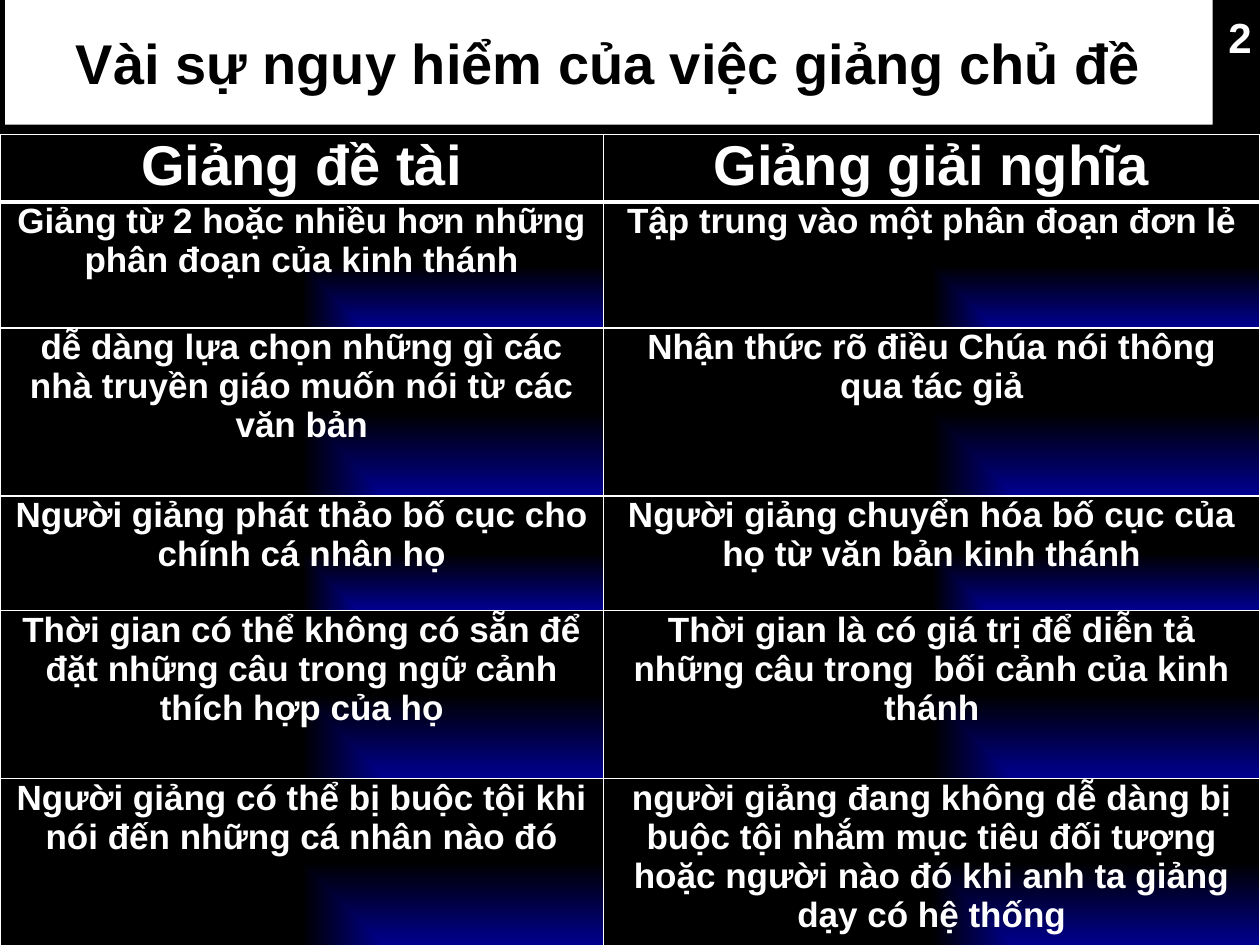
from dataclasses import dataclass

from lxml.etree import SubElement
from pptx import Presentation
from pptx.dml.color import RGBColor
from pptx.enum.text import MSO_ANCHOR, MSO_AUTO_SIZE, PP_ALIGN
from pptx.oxml.ns import qn
from pptx.util import Pt


@dataclass(frozen=True)
class Theme:
    font: str = "Arial"
    black: str = "000000"
    white: str = "FFFFFF"
    blue: str = "000090"
    heading_size: int = 32
    number_size: int = 24
    body_size: int = 20
    thin_line: int = 1
    thick_line: int = 3


THEME = Theme()
TITLE = "Vài sự nguy hiểm của việc giảng chủ đề"
COMPARISON = [
    ("Giảng đề tài", "Giảng giải nghĩa"),
    ("Giảng từ 2 hoặc nhiều hơn những phân đoạn của kinh thánh",
     "Tập trung vào một phân đoạn đơn lẻ"),
    ("dễ dàng lựa chọn những gì các nhà truyền giáo muốn nói từ các văn bản",
     "Nhận thức rõ điều Chúa nói thông qua tác giả"),
    ("Người giảng phát thảo bố cục cho chính cá nhân họ",
     "Người giảng chuyển hóa bố cục của họ từ văn bản kinh thánh"),
    ("Thời gian có thể không có sẵn để đặt những câu trong ngữ cảnh thích hợp của họ",
     "Thời gian là có giá trị để diễn tả những câu trong  bối cảnh của kinh thánh"),
    ("Người giảng có thể bị buộc tội khi nói đến những cá nhân nào đó",
     "người giảng đang không dễ dàng bị buộc tội nhắm mục tiêu đối tượng "
     "hoặc người nào đó khi anh ta giảng dạy có hệ thống"),
]
COLUMN_WIDTHS = [344.9, 375.1]
ROW_HEIGHTS = [38.2, 72, 96, 65.5, 96, 95.6]


def paint(fill, color):
    fill.solid()
    fill.fore_color.rgb = RGBColor.from_string(color)


def write(frame, text, size, color, align):
    frame.text = text
    for para in frame.paragraphs:
        para.alignment = align
        for span in para.runs:
            span.font.name = THEME.font
            span.font.size = Pt(size)
            span.font.bold = True
            span.font.color.rgb = RGBColor.from_string(color)


def add_border(properties, side, width):
    line = SubElement(properties, qn(f"a:ln{side}"), w=str(Pt(width)))
    solid = SubElement(line, qn("a:solidFill"))
    SubElement(solid, qn("a:srgbClr"), val=THEME.white)


def add_corner_gradient(properties):
    gradient = SubElement(properties, qn("a:gradFill"), rotWithShape="1")
    stops = SubElement(gradient, qn("a:gsLst"))
    for position, color in ((0, THEME.blue), (100000, THEME.black)):
        stop = SubElement(stops, qn("a:gs"), pos=str(position))
        SubElement(stop, qn("a:srgbClr"), val=color)
    outline = SubElement(gradient, qn("a:path"), path="rect")
    SubElement(outline, qn("a:fillToRect"), l="100000", t="100000")


def place_title(page, left, top, width, height):
    title = page.shapes.title
    title.left, title.top = Pt(left), Pt(top)
    title.width, title.height = Pt(width), Pt(height)
    paint(title.fill, THEME.white)
    frame = title.text_frame
    frame.auto_size = MSO_AUTO_SIZE.NONE
    frame.vertical_anchor = MSO_ANCHOR.MIDDLE
    write(frame, TITLE, THEME.heading_size, THEME.black, PP_ALIGN.CENTER)


def place_number(page, left, top, width, height):
    box = page.shapes.add_textbox(Pt(left), Pt(top), Pt(width), Pt(height))
    box.text_frame.word_wrap = False
    write(box.text_frame, "2", THEME.number_size, THEME.white, PP_ALIGN.LEFT)


def format_cell(cell, text, row):
    is_header = row == 0
    cell.margin_left = cell.margin_right = Pt(4.5)
    cell.margin_top = cell.margin_bottom = Pt(0)
    cell.vertical_anchor = MSO_ANCHOR.TOP
    size = THEME.heading_size if is_header else THEME.body_size
    write(cell.text_frame, text, size, THEME.white, PP_ALIGN.CENTER)
    properties = cell._tc.get_or_add_tcPr()
    thick_side = {0: "B", 1: "T"}.get(row)
    for side in "LRTB":
        width = THEME.thick_line if side == thick_side else THEME.thin_line
        add_border(properties, side, width)
    if is_header:
        paint(cell.fill, THEME.black)
    else:
        add_corner_gradient(properties)


def place_comparison(page, left, top, width, height):
    table = page.shapes.add_table(
        len(ROW_HEIGHTS), len(COLUMN_WIDTHS),
        Pt(left), Pt(top), Pt(width), Pt(height)).table
    table.horz_banding = False
    for column, column_width in zip(table.columns, COLUMN_WIDTHS):
        column.width = Pt(column_width)
    for row, row_height in zip(table.rows, ROW_HEIGHTS):
        row.height = Pt(row_height)
    for row, texts in enumerate(COMPARISON):
        for column, text in enumerate(texts):
            format_cell(table.cell(row, column), text, row)


def main():
    deck = Presentation()
    deck.slide_width, deck.slide_height = Pt(720), Pt(540)
    page = deck.slides.add_slide(deck.slide_layouts[5])
    paint(page.background.fill, THEME.black)
    place_title(page, 2.9, 0, 690, 71.3)
    place_number(page, 694.8, 2.9, 28, 36)
    place_comparison(page, 0, 77, sum(COLUMN_WIDTHS), sum(ROW_HEIGHTS))
    deck.save("out.pptx")


if __name__ == "__main__":
    main()
